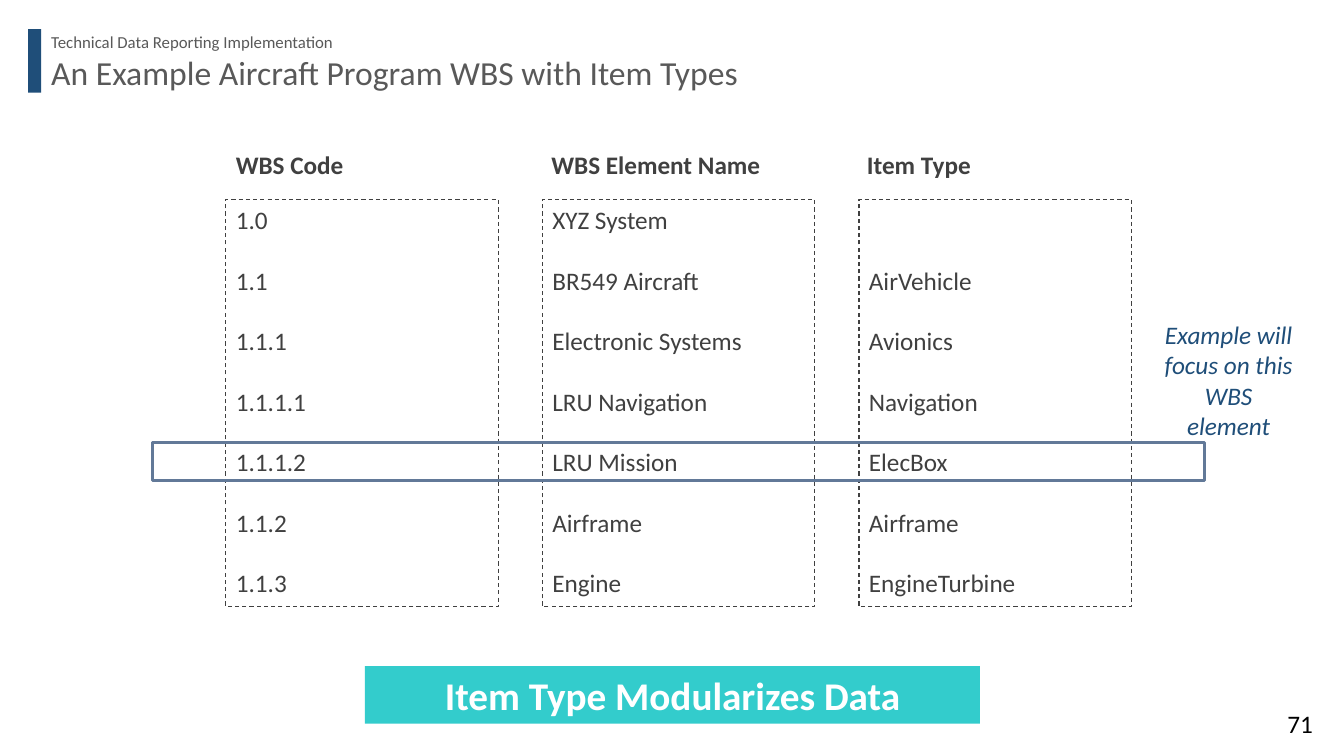
from pptx import Presentation
from pptx import util as u
from pptx.dml.color import RGBColor
from pptx.enum import dml, shapes, text

NAVY = RGBColor(0x1F, 0x4E, 0x79)
SLATE = RGBColor(0x62, 0x79, 0x98)
TEAL = RGBColor(0x33, 0xCC, 0xCC)
GREY = RGBColor(0x59, 0x59, 0x59)
CHARCOAL = RGBColor(0x40, 0x40, 0x40)
WHITE = RGBColor(0xFF, 0xFF, 0xFF)
BLACK = RGBColor(0, 0, 0)

LINE_HEIGHT = 21.6
ROW_PITCH = 0.6
COLUMN_PITCH = 3.14
HEADING_PITCH = 3.13
COLUMNS = [
    ("WBS Code", 1.28, 0,
     ["1.0", "1.1", "1.1.1", "1.1.1.1", "1.1.1.2", "1.1.2", "1.1.3"]),
    ("WBS Element Name", 2.29, 0,
     ["XYZ System", "BR549 Aircraft", "Electronic Systems", "LRU Navigation",
      "LRU Mission", "Airframe", "Engine"]),
    ("Item Type", 1.24, 1,
     ["AirVehicle", "Avionics", "Navigation", "ElecBox", "Airframe", "EngineTurbine"]),
]


def write(box, lines, size, color, align=text.PP_ALIGN.LEFT, anchor=text.MSO_ANCHOR.TOP,
          bold=False, italic=False, wrap=True, spacing=None, gap=0):
    """Fill a box with one paragraph per line."""
    frame = box.text_frame
    frame.word_wrap = wrap
    frame.vertical_anchor = anchor
    for index, line in enumerate(lines):
        para = frame.add_paragraph() if index else frame.paragraphs[0]
        para.alignment = align
        if spacing:
            para.line_spacing = spacing
        if index:
            para.space_before = u.Pt(gap)
        span = para.add_run()
        span.text = line
        span.font.name = "Calibri"
        span.font.size = u.Pt(size)
        span.font.bold = bold
        span.font.italic = italic
        span.font.color.rgb = color


def add_label(page, left, top, width, height, line, size, color, **style):
    """Add a text box holding one line of text."""
    box = page.shapes.add_textbox(*map(u.Inches, (left, top, width, height)))
    write(box, [line], size, color, **style)


def add_panel(page, left, top, width, height, fill=None, line=None, weight=0.75):
    """Add a rectangle with an optional fill and outline."""
    panel = page.shapes.add_shape(shapes.MSO_SHAPE.RECTANGLE,
                                  *map(u.Inches, (left, top, width, height)))
    panel.shadow.inherit = False
    if fill is None:
        panel.fill.background()
    else:
        panel.fill.solid()
        panel.fill.fore_color.rgb = fill
    if line is None:
        panel.line.fill.background()
    else:
        panel.line.color.rgb = line
        panel.line.width = u.Pt(weight)
    return panel


def add_header(page, left, top):
    """Add the accent bar, section name and slide title."""
    add_panel(page, left, top, 0.13, 0.63, fill=NAVY)
    add_label(page, left + 0.13, top, 4.73, 0.3,
              "Technical Data Reporting Implementation", 12, GREY, spacing=0.9)
    add_label(page, left + 0.13, top + 0.22, 9.3, 0.55,
              "An Example Aircraft Program WBS with Item Types", 24, GREY, spacing=0.9)


def add_wbs_columns(page, left, top):
    """Add the headed, dashed columns of the work breakdown."""
    for index, (heading, width, first_row, entries) in enumerate(COLUMNS):
        add_label(page, left + index * HEADING_PITCH, top, width, 0.4,
                  heading, 18, CHARCOAL, bold=True, wrap=False)
        column = add_panel(page, left + index * COLUMN_PITCH, top + 0.55, 2.7, 4.04,
                           line=CHARCOAL)
        column.line.dash_style = dml.MSO_LINE.DASH
        column.text_frame.margin_top = u.Inches(0.05 + first_row * ROW_PITCH)
        write(column, entries, 18, CHARCOAL, gap=LINE_HEIGHT)


def add_focus(page, left, top):
    """Add the frame around the focus row and its note."""
    add_panel(page, left, top, 10.44, 0.38, line=SLATE, weight=2.25)
    add_label(page, left + 9.93, top - 1.27, 1.49, 1.31,
              "Example will focus on this WBS element", 18, NAVY,
              align=text.PP_ALIGN.CENTER, italic=True)


def add_footer(page, left, top):
    """Add the takeaway banner and the page number."""
    banner = add_panel(page, left, top, 6.1, 0.57, fill=TEAL)
    write(banner, ["Item Type Modularizes Data"], 28, WHITE, bold=True, wrap=False,
          align=text.PP_ALIGN.CENTER, anchor=text.MSO_ANCHOR.MIDDLE)
    add_label(page, left + 9.05, top + 0.37, 0.55, 0.4, "71", 18, BLACK)


def main():
    """Build the slide and save the deck."""
    deck = Presentation()
    deck.slide_width = u.Inches(13.33)
    deck.slide_height = u.Inches(7.5)
    page = deck.slides.add_slide(deck.slide_layouts[6])
    add_header(page, 0.28, 0.29)
    add_footer(page, 3.62, 6.61)
    add_wbs_columns(page, 2.24, 1.43)
    add_focus(page, 1.51, 4.39)
    deck.save("out.pptx")


if __name__ == "__main__":
    main()
